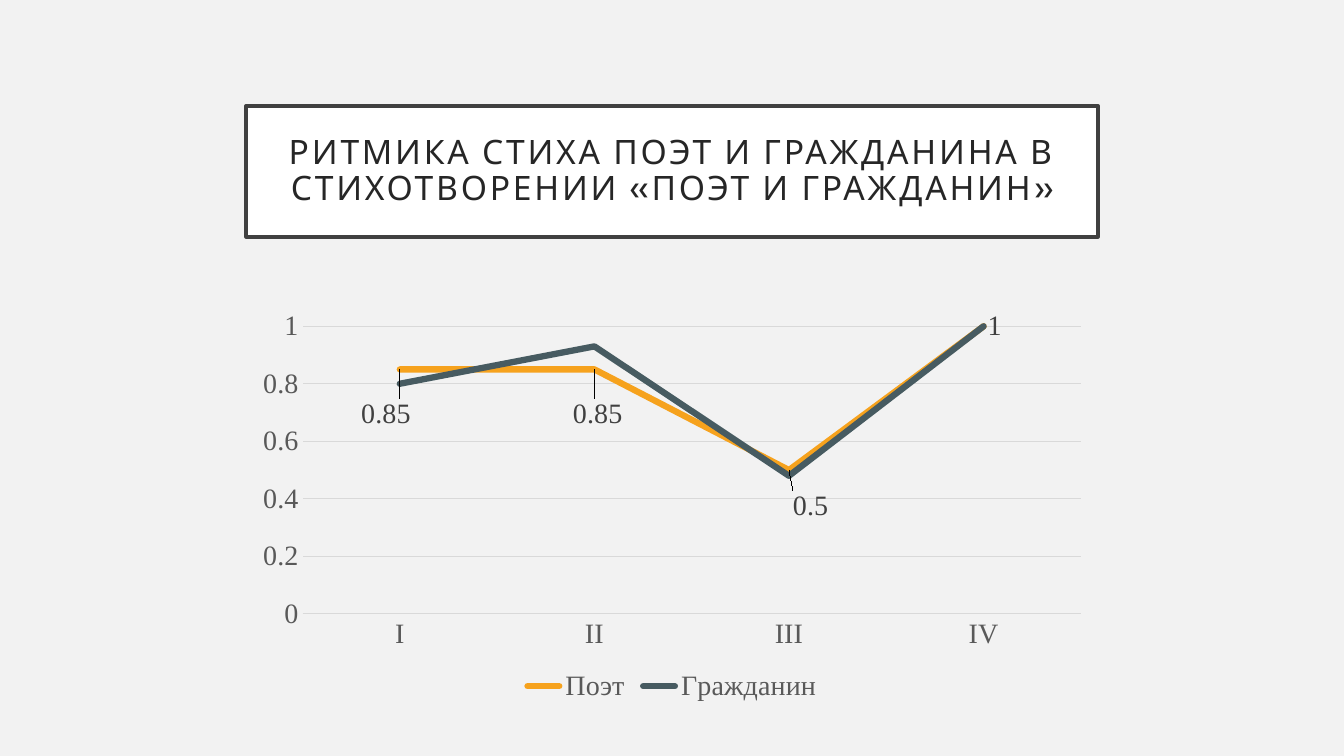
from lxml import etree
from pptx import Presentation
from pptx.chart.data import CategoryChartData
from pptx.dml.color import RGBColor
from pptx.enum.chart import XL_CHART_TYPE, XL_LABEL_POSITION, XL_LEGEND_POSITION, XL_TICK_MARK
from pptx.enum.shapes import MSO_SHAPE
from pptx.enum.text import MSO_ANCHOR, PP_ALIGN
from pptx.oxml import parse_xml
from pptx.oxml.ns import nsdecls, qn
from pptx.util import Inches, Pt

LINE_CHART = XL_CHART_TYPE.LINE
LABEL_RIGHT = XL_LABEL_POSITION.RIGHT
LEGEND_BOTTOM = XL_LEGEND_POSITION.BOTTOM
NO_TICK = XL_TICK_MARK.NONE
RECT = MSO_SHAPE.RECTANGLE
MIDDLE = MSO_ANCHOR.MIDDLE
CENTER = PP_ALIGN.CENTER

WIDTH, HEIGHT = 13.33, 7.5
LEFT, COLUMN = 2.44, 8.45  # shared column of title and chart
COLORS = {
    "background": "F2F2F2", "title_fill": "FFFFFF", "title_line": "404040",
    "title_text": "262626", "axis_text": "595959", "label_text": "404040",
    "grid": "D9D9D9", "poet": "F6A21D", "citizen": "475B61",
}
TITLE = "РИТМИКА СТИХА ПОЭТ И ГРАЖДАНИНА В СТИХОТВОРЕНИИ «ПОЭТ И ГРАЖДАНИН»"
CATEGORIES = ["I", "II", "III", "IV"]
SERIES = [
    ("Поэт", [0.85, 0.85, 0.5, 1], "poet"),
    ("Гражданин", [0.8, 0.93, 0.48, 1], "citizen"),
]
# Label shifts as shares of the chart's width and height
LABEL_SHIFTS = [(-0.05, 0.11), (-0.03, 0.11), (0, 0.09)]


def rgb(name):
    return RGBColor.from_string(COLORS[name])


def set_font(font, color, size=20, name="Times New Roman"):
    for key, value in {"size": Pt(size), "name": name}.items():
        setattr(font, key, value)
    font.color.rgb = rgb(color)


def set_line(line, color, width):
    line.color.rgb = rgb(color)
    line.width = Pt(width)


def add_title(slide, top, height):
    sp = slide.shapes.add_shape(RECT, Inches(LEFT), Inches(top), Inches(COLUMN), Inches(height))
    sp.shadow.inherit = False
    sp.fill.solid()
    sp.fill.fore_color.rgb = rgb("title_fill")
    set_line(sp.line, "title_line", 2.5)
    tf = sp.text_frame
    frame = {"word_wrap": True, "vertical_anchor": MIDDLE}
    frame.update({f"margin_{side}": Inches(0.2) for side in ("left", "right", "top", "bottom")})
    for key, value in frame.items():
        setattr(tf, key, value)
    p = tf.paragraphs[0]
    p.alignment = CENTER
    p.line_spacing = 0.9
    r = p.add_run()
    r.text = TITLE
    set_font(r.font, "title_text", 24, "Cabin")
    r.font._element.set("spc", "200")


def format_axis(axis):
    axis.major_tick_mark = axis.minor_tick_mark = NO_TICK
    set_font(axis.tick_labels.font, "axis_text")


def label_series(series):
    labels = series.data_labels
    labels.show_value = True
    labels.position = LABEL_RIGHT
    set_font(labels.font, "label_text")
    for i in range(len(LABEL_SHIFTS)):
        label = series.points[i].data_label
        set_font(label.font, "label_text")
        label.position = LABEL_RIGHT
    # Manual layout goes right after each label's index
    for element, (x, y) in zip(labels._element.findall(qn("c:dLbl")), LABEL_SHIFTS):
        layout = parse_xml(f"<c:layout {nsdecls('c')}><c:manualLayout/></c:layout>")
        for tag, share in (("c:x", x), ("c:y", y)):
            etree.SubElement(layout[0], qn(tag)).set("val", str(share))
        element.insert(1, layout)


def add_line_chart(slide, top, height):
    data = CategoryChartData()
    data.categories = CATEGORIES
    for name, values, _ in SERIES:
        data.add_series(name, values)
    chart = slide.shapes.add_chart(
        LINE_CHART, Inches(LEFT), Inches(top), Inches(COLUMN), Inches(height), data).chart
    chart.has_title = False
    set_font(chart.font, "axis_text")

    # Axes
    format_axis(chart.category_axis)
    set_line(chart.category_axis.format.line, "grid", 0.75)
    axis = chart.value_axis
    format_axis(axis)
    for key, value in {"minimum_scale": 0, "maximum_scale": 1, "major_unit": 0.2}.items():
        setattr(axis, key, value)
    axis.format.line.fill.background()
    set_line(axis.major_gridlines.format.line, "grid", 0.75)

    # Legend
    chart.has_legend = True
    chart.legend.position = LEGEND_BOTTOM
    chart.legend.include_in_layout = False
    set_font(chart.legend.font, "axis_text")

    # Series
    for series, (_, _, color) in zip(chart.plots[0].series, SERIES):
        series.smooth = False
        set_line(series.format.line, color, 4.5)
        series._element.find(qn("c:spPr")).find(qn("a:ln")).set("cap", "rnd")
    label_series(chart.plots[0].series[0])


def main():
    prs = Presentation()
    prs.slide_width, prs.slide_height = Inches(WIDTH), Inches(HEIGHT)
    slide = prs.slides.add_slide(prs.slide_layouts[6])
    slide.background.fill.solid()
    slide.background.fill.fore_color.rgb = rgb("background")
    add_title(slide, HEIGHT * 0.14, 1.3)
    add_line_chart(slide, HEIGHT * 0.4, 4.02)
    prs.save("out.pptx")


if __name__ == "__main__":
    main()
